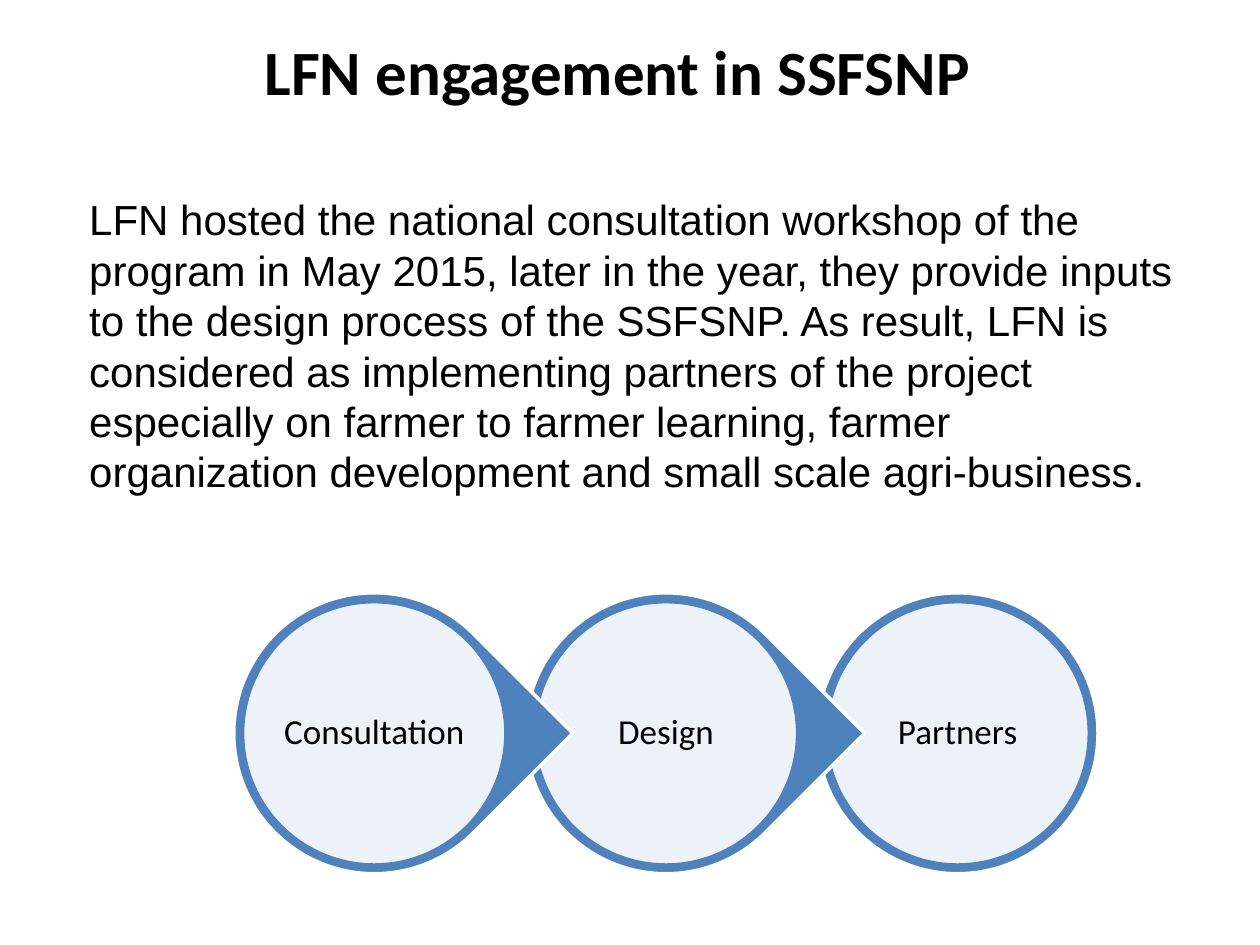
from lxml.etree import SubElement
from pptx import Presentation
from pptx.dml.color import RGBColor
from pptx.enum.shapes import MSO_SHAPE
from pptx.enum.text import MSO_ANCHOR, PP_ALIGN
from pptx.oxml.ns import qn
from pptx.util import Inches, Pt

COLORS = {"text": "000000", "accent": "4F81BD", "white": "FFFFFF"}
TITLE = "LFN engagement in SSFSNP"
BODY = (
    "LFN hosted the national consultation workshop of the program in May 2015, "
    "later in the year, they provide inputs to the design process of the SSFSNP. "
    "As result, LFN is considered as implementing partners of the project "
    "especially on farmer to farmer learning, farmer organization development "
    "and small scale agri-business."
)
STAGES = ["Consultation", "Design", "Partners"]
FIRST_X, CENTER_Y, PITCH = 2.97, 5.82, 2.315
OUTER, INNER, LABEL = 2.23, 2.09, 1.49


def rgb(name):
    return RGBColor.from_string(COLORS[name])


def write(tf, text, size, font, align=PP_ALIGN.LEFT, bold=False):
    tf.text = text
    p = tf.paragraphs[0]
    p.alignment = align
    f = p.runs[0].font
    f.size, f.name, f.bold = Pt(size), font, bold
    f.color.rgb = rgb("text")
    return p


def centered_box(cx, size):
    """Left, top, width and height of a square on the row's centre line."""
    return [Inches(v) for v in (cx - size / 2, CENTER_Y - size / 2, size, size)]


def add_disc(s, kind, cx, size, fill, line):
    sp = s.shapes.add_shape(kind, *centered_box(cx, size))
    sp.shadow.inherit = False
    sp.fill.solid()
    sp.fill.fore_color.rgb = rgb(fill)
    sp.line.color.rgb = rgb(line)
    sp.line.width = Pt(2)
    return sp


def set_opacity(sp, percent):
    color = sp._element.spPr.find(qn("a:solidFill"))[0]
    SubElement(color, qn("a:alpha")).set("val", str(percent * 1000))


def add_stage(s, text, cx, pointed):
    kind = MSO_SHAPE.TEAR if pointed else MSO_SHAPE.OVAL
    outer = add_disc(s, kind, cx, OUTER, "accent", "white")
    if pointed:
        outer.rotation = 45
    inner = add_disc(s, MSO_SHAPE.OVAL, cx, INNER, "white", "accent")
    set_opacity(inner, 90)

    tf = s.shapes.add_textbox(*centered_box(cx, LABEL)).text_frame
    tf.word_wrap = False
    tf.vertical_anchor = MSO_ANCHOR.MIDDLE
    tf.margin_left = tf.margin_right = Inches(0.03)
    tf.margin_top = tf.margin_bottom = Inches(0.03)
    write(tf, text, 20, "Calibri", PP_ALIGN.CENTER).line_spacing = 0.9


def add_title(s):
    title = s.shapes.title
    title.left, title.top = Inches(0.65), Inches(0.12)
    title.width, title.height = Inches(8.5), Inches(0.87)
    title.text_frame.vertical_anchor = MSO_ANCHOR.MIDDLE
    write(title.text_frame, TITLE, 36, "Calibri", PP_ALIGN.CENTER, True)


def add_body(s):
    box = s.shapes.add_textbox(Inches(0.61), Inches(1.49), Inches(8.89), Inches(2.52))
    box.text_frame.word_wrap = True
    write(box.text_frame, BODY, 24, "Arial")


def main():
    prs = Presentation()
    prs.slide_width, prs.slide_height = Inches(10), Inches(7.5)
    s = prs.slides.add_slide(prs.slide_layouts[5])
    add_title(s)
    add_body(s)
    # Right to left, so that each point overlaps the next stage
    last = len(STAGES) - 1
    for i in range(last, -1, -1):
        add_stage(s, STAGES[i], FIRST_X + i * PITCH, pointed=i < last)
    prs.save("out.pptx")


if __name__ == "__main__":
    main()
